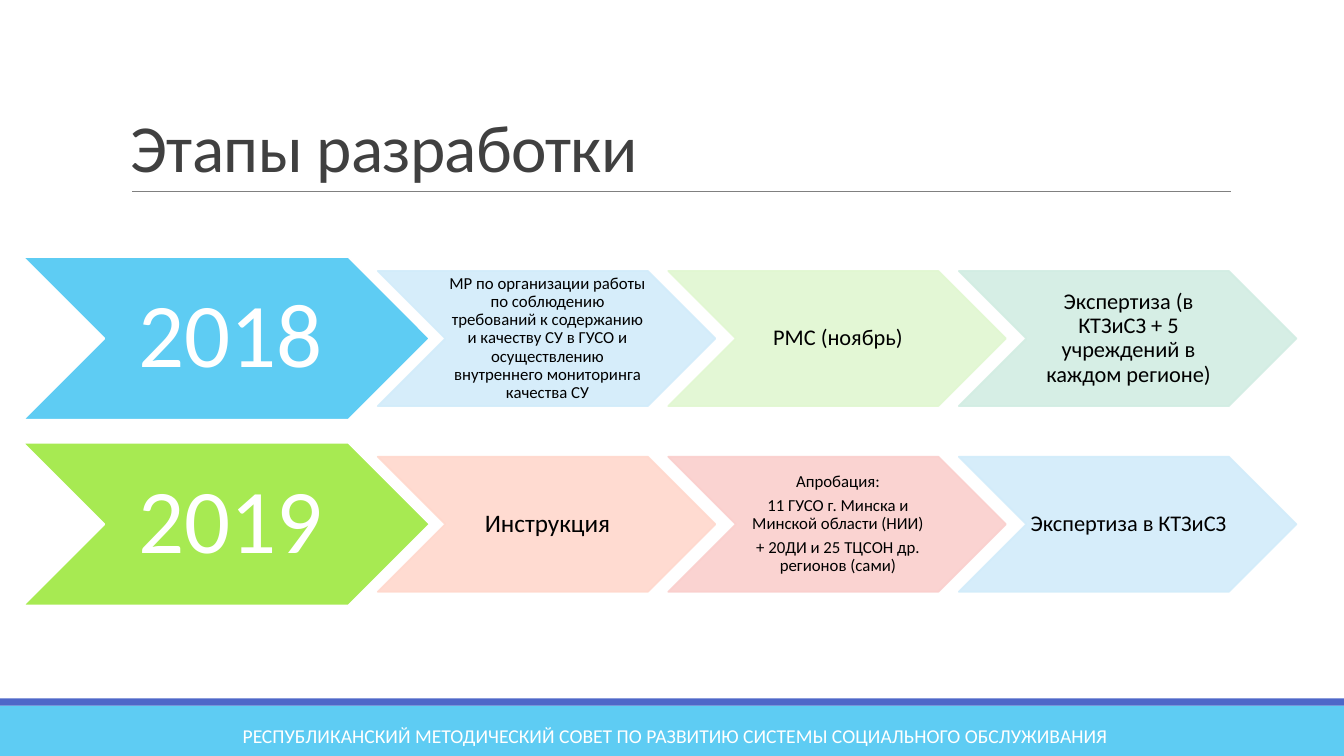
from lxml import etree
from pptx import Presentation
from pptx.dml.color import RGBColor
from pptx.enum.shapes import MSO_CONNECTOR, MSO_SHAPE
from pptx.enum.text import MSO_ANCHOR, PP_ALIGN
from pptx.oxml.ns import qn
from pptx.util import Cm, Pt

RECTANGLE = MSO_SHAPE.RECTANGLE
CHEVRON = MSO_SHAPE.CHEVRON
STRAIGHT = MSO_CONNECTOR.STRAIGHT
LEFT, CENTER = PP_ALIGN.LEFT, PP_ALIGN.CENTER
MIDDLE, BOTTOM = MSO_ANCHOR.MIDDLE, MSO_ANCHOR.BOTTOM

FONT = "Calibri"
SLIDE_WIDTH, SLIDE_HEIGHT = 33.87, 19.05
SKY, LIME, INDIGO, WHITE, BLACK = "5ECCF3", "A7EA52", "4E67C8", "FFFFFF", "000000"
DEFAULT_MARGINS = (0.25, 0.13, 0.25, 0.13)
YEAR_MARGINS = (0.23, 0.13, 0, 0.13)
STEP_MARGINS = (0.05, 0.03, 0, 0.03)

STAGES = [
    ("2018", SKY, [
        (["МР по организации работы по соблюдению требований к содержанию и качеству СУ "
          "в ГУСО и осуществлению внутреннего мониторинга качества СУ"], 12, "D2ECFA"),
        (["РМС (ноябрь)"], 16, "E1F7D1"),
        (["Экспертиза (в КТЗиСЗ + 5 учреждений в каждом регионе)"], 16, "D2EDE3"),
    ]),
    ("2019", LIME, [
        (["Инструкция"], 18, "FFD8CD"),
        (["Апробация:", "11 ГУСО г. Минска и Минской области (НИИ)",
          "+ 20ДИ и 25 ТЦСОН др. регионов (сами)"], 12, "FACFCD"),
        (["Экспертиза в КТЗиСЗ"], 16, "D2ECFA"),
    ]),
]


def color(value):
    return RGBColor.from_string(value)


def write_text(shape, paragraphs, size, font_color, align=CENTER, anchor=MIDDLE,
               margins=DEFAULT_MARGINS, line_spacing=1.0, space_after=0, tracking=None):
    frame = shape.text_frame
    frame.word_wrap = True
    frame.vertical_anchor = anchor
    (frame.margin_left, frame.margin_top,
     frame.margin_right, frame.margin_bottom) = map(Cm, margins)
    for index, text in enumerate(paragraphs):
        paragraph = frame.add_paragraph() if index else frame.paragraphs[0]
        paragraph.alignment = align
        paragraph.line_spacing = line_spacing
        paragraph.space_after = Pt(space_after)
        run = paragraph.add_run()
        run.text = text
        run.font.name = FONT
        run.font.size = Pt(size)
        run.font.color.rgb = color(font_color)
        if tracking is not None:
            run.font._element.set("spc", str(tracking))


def add_filled_shape(slide, kind, box, fill, line=None, opacity=None):
    shape = slide.shapes.add_shape(kind, *map(Cm, box))
    shape.shadow.inherit = False
    shape.fill.solid()
    shape.fill.fore_color.rgb = color(fill)
    if line:
        shape.line.color.rgb = color(line)
        shape.line.width = Pt(1.25)
    else:
        shape.line.fill.background()
    if opacity:
        for solid_color in shape._element.spPr.iter(qn("a:srgbClr")):
            alpha = etree.SubElement(solid_color, qn("a:alpha"))
            alpha.set("val", str(opacity * 1000))
    return shape


def add_title(slide, box):
    left, top, width, height = box
    title = slide.shapes.add_textbox(*map(Cm, box))
    write_text(title, ["Этапы разработки"], 48, "404040", align=LEFT, anchor=BOTTOM,
               line_spacing=0.85, tracking=-50)
    rule_left, rule_top = left + 0.28, top + height
    rule = slide.shapes.add_connector(STRAIGHT, Cm(rule_left), Cm(rule_top),
                                      Cm(rule_left + 27.69), Cm(rule_top))
    rule.line.color.rgb = color("808080")
    rule.line.width = Pt(0.5)
    etree.SubElement(rule._element.spPr, qn("a:effectLst"))


def add_stage(slide, box, year, year_color, steps):
    left, top, width, height = box
    year_width = height * 2.5
    step_height = height * 0.83
    step_width = step_height * 2.5
    first_step = left + year_width - 1.31
    pitch = (left + width - step_width - first_step) / (len(steps) - 1)

    chevron = add_filled_shape(slide, CHEVRON, (left, top, year_width, height),
                               year_color, line=WHITE)
    write_text(chevron, [year], 65, WHITE, margins=YEAR_MARGINS, line_spacing=0.9)
    for index, (paragraphs, size, fill) in enumerate(steps):
        step_box = (first_step + index * pitch, top + (height - step_height) / 2,
                    step_width, step_height)
        chevron = add_filled_shape(slide, CHEVRON, step_box, fill, line=fill, opacity=90)
        write_text(chevron, paragraphs, size, BLACK, margins=STEP_MARGINS,
                   line_spacing=0.9, space_after=size * 0.35)


def add_stages(slide, box):
    left, top, width, height = box
    gap = 0.58
    row_height = (height - gap * (len(STAGES) - 1)) / len(STAGES)
    for index, stage in enumerate(STAGES):
        row_box = (left, top + index * (row_height + gap), width, row_height)
        add_stage(slide, row_box, *stage)


def add_footer(slide, box):
    left, top, width, height = box
    stripe = 0.18
    add_filled_shape(slide, RECTANGLE, (left, top + stripe, width, height - stripe), SKY)
    add_filled_shape(slide, RECTANGLE, (left, top, width, stripe), INDIGO)
    caption = slide.shapes.add_textbox(Cm(left + 5.03), Cm(top + 0.43), Cm(23.98), Cm(1.02))
    write_text(caption, ["РЕСПУБЛИКАНСКИЙ МЕТОДИЧЕСКИЙ СОВЕТ ПО РАЗВИТИЮ "
                         "СИСТЕМЫ СОЦИАЛЬНОГО ОБСЛУЖИВАНИЯ"], 14, WHITE)


def main():
    presentation = Presentation()
    presentation.slide_width = Cm(SLIDE_WIDTH)
    presentation.slide_height = Cm(SLIDE_HEIGHT)
    slide = presentation.slides.add_slide(presentation.slide_layouts[6])
    add_footer(slide, (0, 17.6, SLIDE_WIDTH, 1.45))
    add_title(slide, (3.05, 0.79, 27.94, 4.04))
    add_stages(slide, (0.58, 6.48, 32.09, 8.78))
    presentation.save("out.pptx")


if __name__ == "__main__":
    main()
